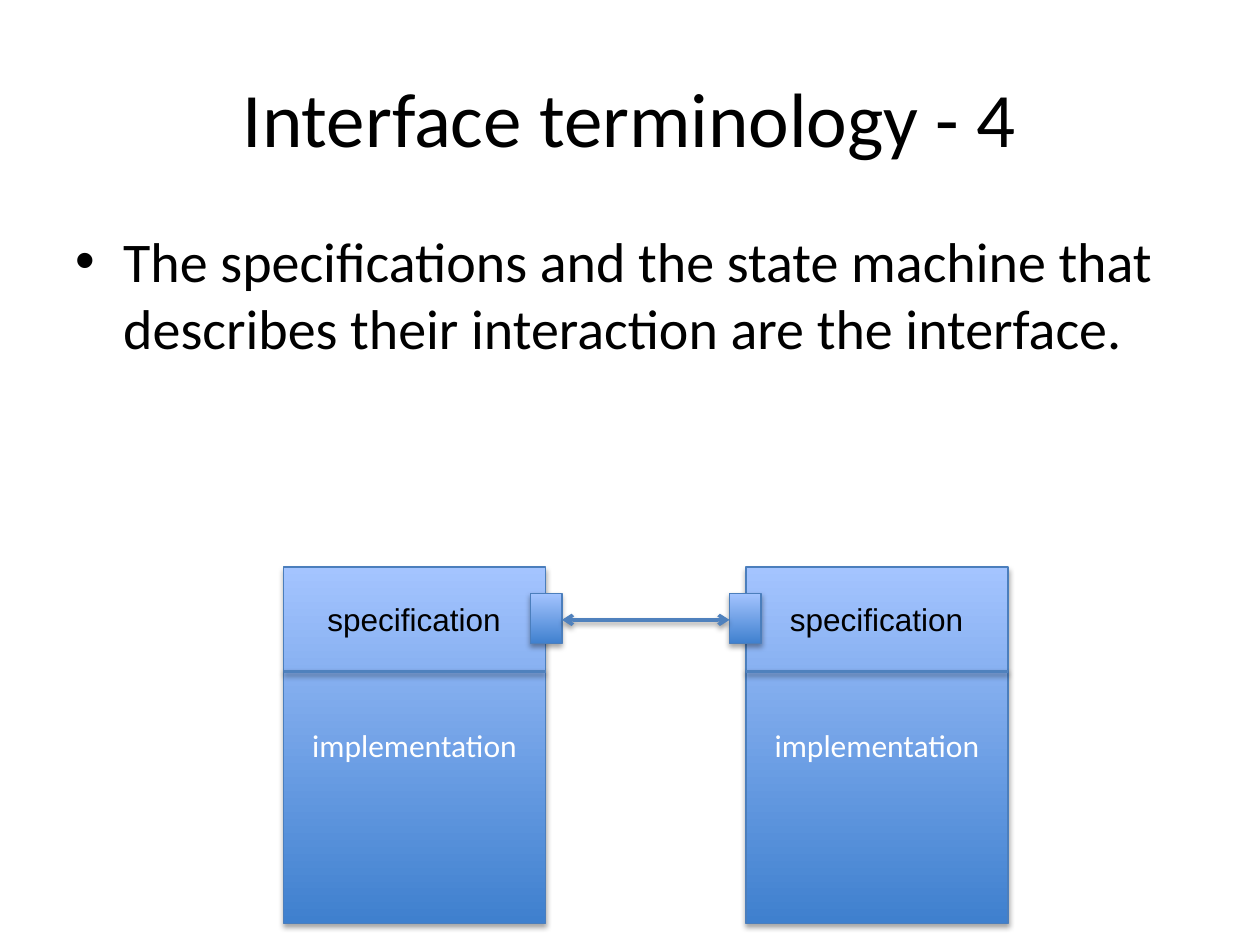
from lxml.etree import SubElement
from pptx import Presentation
from pptx.dml.color import RGBColor
from pptx.enum.shapes import MSO_CONNECTOR as Connector, MSO_SHAPE as Shape
from pptx.enum.text import MSO_ANCHOR as Anchor, MSO_AUTO_SIZE as AutoSize, PP_ALIGN as Align
from pptx.oxml.ns import qn
from pptx.util import Inches, Pt

BLACK = RGBColor(0x00, 0x00, 0x00)
WHITE = RGBColor(0xFF, 0xFF, 0xFF)
DEEP_BLUE = RGBColor(0x3F, 0x80, 0xCE)
PALE_BLUE = RGBColor(0xA4, 0xC4, 0xFF)
OUTLINE_BLUE = RGBColor(0x4B, 0x7E, 0xBC)
LINE_BLUE = RGBColor(0x4F, 0x81, 0xBD)

MODULE_TOP, MODULE_WIDTH, MODULE_HEIGHT = 4.5, 2.08, 2.83
LEFT_MODULE, RIGHT_MODULE = 2.25, 5.92
DIVIDER_Y = 5.33
PORT_TOP, PORT_WIDTH, PORT_HEIGHT = 4.71, 0.25, 0.4
LEFT_PORT, RIGHT_PORT = 4.21, 5.79
LINK_Y = 4.92


def write_text(shape, text, size=18, font="Calibri", color=BLACK,
               align=Align.LEFT, anchor=Anchor.TOP, wrap=True):
    frame = shape.text_frame
    frame.word_wrap = wrap
    frame.vertical_anchor = anchor
    para = frame.paragraphs[0]
    para.alignment = align
    span = para.add_run()
    span.text = text
    span.font.size = Pt(size)
    span.font.name = font
    span.font.color.rgb = color
    return para


def add_text(page, text, left, top, width, height, **text_format):
    box = page.shapes.add_textbox(Inches(left), Inches(top), Inches(width), Inches(height))
    write_text(box, text, **text_format)
    return box


def add_bullet(para):
    props = para._p.get_or_add_pPr()
    props.set("marL", str(Inches(0.38)))
    props.set("indent", str(Inches(-0.38)))
    spacing = SubElement(props, qn("a:spcBef"))
    SubElement(spacing, qn("a:spcPct"), val="20000")
    SubElement(props, qn("a:buFont"), typeface="Arial")
    SubElement(props, qn("a:buChar"), char="•")


def add_shadow(shape, distance, opacity):
    effects = SubElement(shape._element.spPr, qn("a:effectLst"))
    shadow = SubElement(effects, qn("a:outerShdw"), blurRad=str(Pt(3.1)),
                        dist=str(Pt(distance)), dir="5400000", rotWithShape="0")
    color = SubElement(shadow, qn("a:srgbClr"), val=str(BLACK))
    SubElement(color, qn("a:alpha"), val=str(opacity * 1000))


def add_block(page, left, top, width, height):
    block = page.shapes.add_shape(Shape.RECTANGLE, Inches(left), Inches(top),
                                  Inches(width), Inches(height))
    block.fill.gradient()
    block.fill.gradient_angle = 90
    for stop, position, color in zip(block.fill.gradient_stops, (0, 1), (DEEP_BLUE, PALE_BLUE)):
        stop.position = position
        stop.color.rgb = color
    block.line.color.rgb = OUTLINE_BLUE
    block.line.width = Pt(0.75)
    add_shadow(block, 1.8, 35)
    return block


def add_line(page, start, end, y, arrows=False):
    line = page.shapes.add_connector(Connector.STRAIGHT, Inches(start), Inches(y),
                                     Inches(end), Inches(y))
    line.line.color.rgb = LINE_BLUE
    line.line.width = Pt(2)
    if arrows:
        for tip in ("a:headEnd", "a:tailEnd"):
            SubElement(line.line._get_or_add_ln(), qn(tip), type="arrow")
    add_shadow(line, 1.6, 38)


def add_module(page, left, port_left):
    body = add_block(page, left, MODULE_TOP, MODULE_WIDTH, MODULE_HEIGHT)
    write_text(body, "implementation", color=WHITE, align=Align.CENTER, anchor=Anchor.MIDDLE)
    add_line(page, left, left + MODULE_WIDTH, DIVIDER_Y)
    label = add_text(page, "specification", left + 0.25, PORT_TOP, 1.59, 0.4,
                     font="Arial", wrap=False)
    label.text_frame.auto_size = AutoSize.SHAPE_TO_FIT_TEXT
    add_block(page, port_left, PORT_TOP, PORT_WIDTH, PORT_HEIGHT)


def main():
    deck = Presentation()
    deck.slide_width, deck.slide_height = Inches(10), Inches(7.5)
    page = deck.slides.add_slide(deck.slide_layouts[6])
    add_text(page, "Interface terminology - 4", 0.5, 0.3, 9, 1.25,
             size=44, align=Align.CENTER, anchor=Anchor.MIDDLE)
    statement = add_text(
        page,
        "The specifications and the state machine that describes their interaction are the interface.",
        0.5, 1.75, 9, 2.5, size=32)
    add_bullet(statement.text_frame.paragraphs[0])
    add_module(page, LEFT_MODULE, LEFT_PORT)
    add_module(page, RIGHT_MODULE, RIGHT_PORT)
    add_line(page, LEFT_PORT + PORT_WIDTH, RIGHT_PORT, LINK_Y, arrows=True)
    deck.save("out.pptx")


if __name__ == "__main__":
    main()
